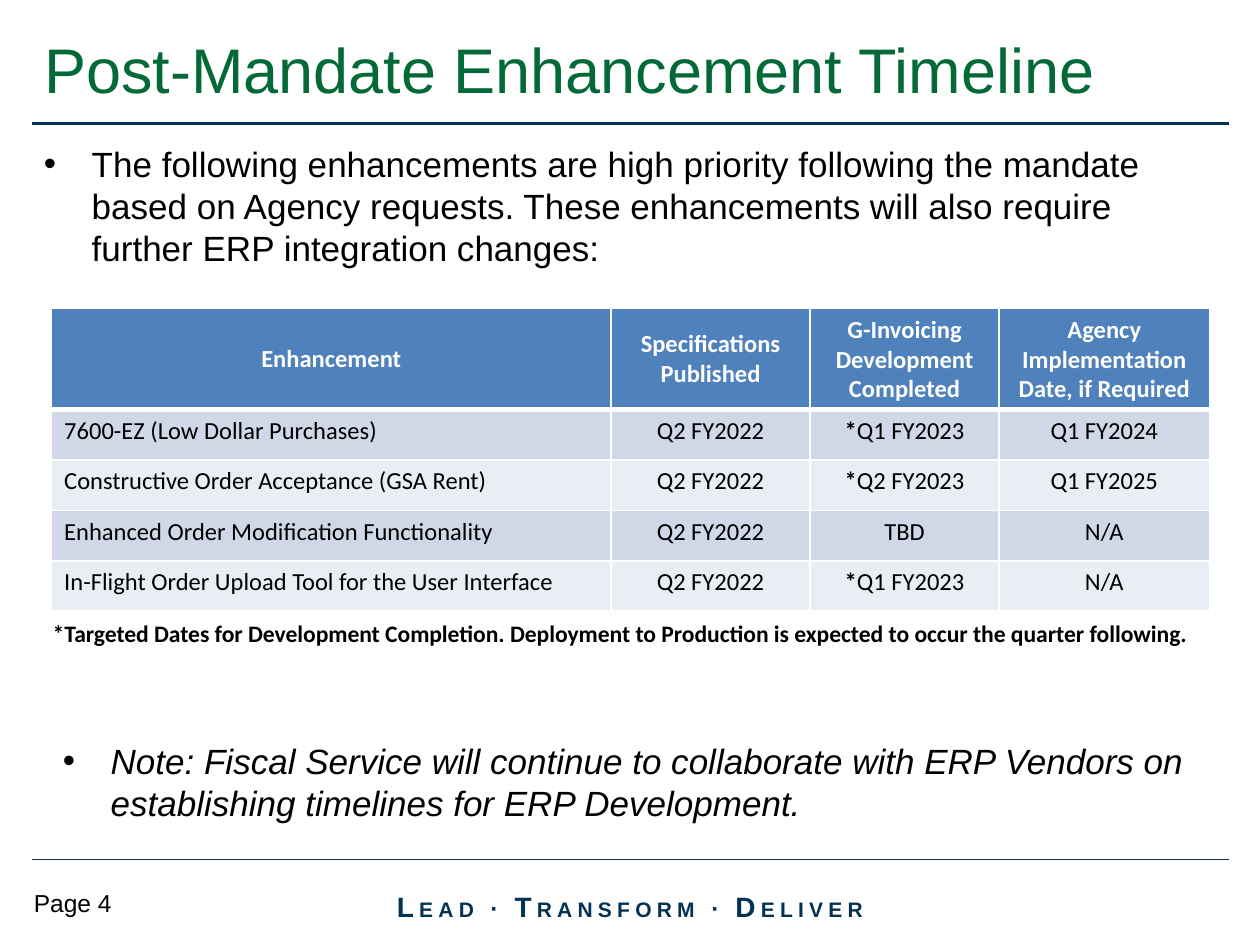
from dataclasses import dataclass

from lxml import etree
from pptx import Presentation
from pptx.dml.color import RGBColor
from pptx.enum.shapes import MSO_CONNECTOR
from pptx.enum.text import MSO_ANCHOR, PP_ALIGN
from pptx.oxml.ns import qn
from pptx.util import Inches, Pt

STRAIGHT = MSO_CONNECTOR.STRAIGHT
MIDDLE, TOP = MSO_ANCHOR.MIDDLE, MSO_ANCHOR.TOP
LEFT, CENTER = PP_ALIGN.LEFT, PP_ALIGN.CENTER

COLORS = {
    "navy": "043253",
    "green": "036A37",
    "black": "000000",
    "white": "FFFFFF",
    "header": "4F81BD",
    "band_dark": "D0D8E8",
    "band_light": "E9EDF4",
}


@dataclass
class TextBlock:
    text: str
    left: float
    top: float
    width: float
    height: float
    size: float
    font: str = "Arial"
    bold: bool = False
    italic: bool = False
    bullet: bool = False


@dataclass
class Rule:
    top: float
    weight: float


RULES = [Rule(0.98, 2.25), Rule(6.82, 0.75)]

BLOCKS = [
    TextBlock("The following enhancements are high priority following the mandate "
              "based on Agency requests. These enhancements will also require "
              "further ERP integration changes:",
              0.25, 1.08, 9.5, 1.2, 20, bullet=True),
    TextBlock("Note: Fiscal Service will continue to collaborate with ERP Vendors on "
              "establishing timelines for ERP Development.",
              0.4, 5.82, 9.35, 0.77, 20, italic=True, bullet=True),
    TextBlock("*Targeted Dates for Development Completion. Deployment to Production "
              "is expected to occur the quarter following.",
              0.32, 4.86, 9.5, 0.33, 13.5, font="Calibri", bold=True),
    TextBlock("Page 4", 0.17, 7, 1.25, 0.33, 14),
]

COLUMN_WIDTHS = [4.44, 1.58, 1.5, 1.67]
HEADER_HEIGHT, ROW_HEIGHT = 0.75, 0.4
ROWS = [
    ["Enhancement", "Specifications Published", "G-Invoicing Development Completed",
     "Agency Implementation Date, if Required"],
    ["7600-EZ (Low Dollar Purchases)", "Q2 FY2022", "*Q1 FY2023", "Q1 FY2024"],
    ["Constructive Order Acceptance (GSA Rent)", "Q2 FY2022", "*Q2 FY2023", "Q1 FY2025"],
    ["Enhanced Order Modification Functionality", "Q2 FY2022", "TBD", "N/A"],
    ["In-Flight Order Upload Tool for the User Interface", "Q2 FY2022", "*Q1 FY2023", "N/A"],
]

MOTTO = ["Lead", "Transform", "Deliver"]


def rgb(name: str) -> RGBColor:
    return RGBColor.from_string(COLORS[name])


def style_font(font, name: str, size: float, color: str,
               bold: bool = False, italic: bool = False) -> None:
    font.name, font.size = name, Pt(size)
    font.bold, font.italic = bold, italic
    font.color.rgb = rgb(color)


def add_bullet(para, indent: float) -> None:
    properties = para._p.get_or_add_pPr()
    properties.set("marL", str(Inches(indent)))
    properties.set("indent", str(-Inches(indent)))
    etree.SubElement(properties, qn("a:buFont"), typeface="Arial")
    etree.SubElement(properties, qn("a:buChar"), char="•")


def add_block(slide, block: TextBlock) -> None:
    box = slide.shapes.add_textbox(Inches(block.left), Inches(block.top),
                                   Inches(block.width), Inches(block.height))
    box.text_frame.word_wrap = True
    para = box.text_frame.paragraphs[0]
    para.text = block.text
    if block.bullet:
        add_bullet(para, 0.38)
    style_font(para.font, block.font, block.size, "black", block.bold, block.italic)


def add_rule(slide, rule: Rule) -> None:
    line = slide.shapes.add_connector(STRAIGHT, Inches(0.25), Inches(rule.top),
                                      Inches(9.75), Inches(rule.top))
    line.line.color.rgb = rgb("navy")
    line.line.width = Pt(rule.weight)
    etree.SubElement(line._element.spPr, qn("a:effectLst"))


def add_title(slide) -> None:
    title = slide.shapes.title
    title.left, title.top = Inches(0.25), Inches(0.17)
    title.width, title.height = Inches(9.5), Inches(0.75)
    title.text_frame.vertical_anchor = MIDDLE
    para = title.text_frame.paragraphs[0]
    para.text = "Post-Mandate Enhancement Timeline"
    para.alignment = LEFT
    style_font(para.font, "Arial", 36, "green")


def add_motto(slide) -> None:
    """Set the footer motto in spaced capitals with larger initials."""
    box = slide.shapes.add_textbox(Inches(2.83), Inches(6.99), Inches(4.34), Inches(0.4))
    box.text_frame.word_wrap = True
    box.text_frame.vertical_anchor = MIDDLE
    para = box.text_frame.paragraphs[0]
    para.alignment = CENTER
    pieces = []
    for word in MOTTO:
        if pieces:
            pieces += [(" ", 12), ("∙ ", 14)]
        pieces += [(word[0], 16), (word[1:].upper(), 12)]
    for text, size in pieces:
        span = para.add_run()
        span.text = text
        style_font(span.font, "Arial", size, "navy", bold=True)
        span.font._element.set("spc", "300")


def add_borders(cell, top: float, bottom: float) -> None:
    properties = cell._tc.get_or_add_tcPr()
    for side, weight in (("L", 1), ("R", 1), ("T", top), ("B", bottom)):
        line = etree.SubElement(properties, qn(f"a:ln{side}"), w=str(Pt(weight)))
        fill = etree.SubElement(line, qn("a:solidFill"))
        etree.SubElement(fill, qn("a:srgbClr"), val=COLORS["white"])


def fill_cell(cell, text: str, row: int, column: int) -> None:
    header = row == 0
    add_borders(cell, top=3 if row == 1 else 1, bottom=3 if header else 1)
    cell.fill.solid()
    band = "band_dark" if row % 2 else "band_light"
    cell.fill.fore_color.rgb = rgb("header" if header else band)
    cell.vertical_anchor = MIDDLE if header else TOP
    para = cell.text_frame.paragraphs[0]
    para.alignment = CENTER if header or column else LEFT
    style_font(para.font, "Calibri", 14, "white" if header else "black", bold=header)
    if text.startswith("*"):
        star = para.add_run()
        star.text, text = "*", text[1:]
        star.font.bold = True
    para.add_run().text = text


def add_timeline(slide) -> None:
    heights = [HEADER_HEIGHT] + [ROW_HEIGHT] * (len(ROWS) - 1)
    table = slide.shapes.add_table(len(ROWS), len(COLUMN_WIDTHS), Inches(0.41), Inches(2.45),
                                   Inches(sum(COLUMN_WIDTHS)), Inches(sum(heights))).table
    for column, width in zip(table.columns, COLUMN_WIDTHS):
        column.width = Inches(width)
    for row, height in zip(table.rows, heights):
        row.height = Inches(height)
    for row, texts in enumerate(ROWS):
        for column, text in enumerate(texts):
            fill_cell(table.cell(row, column), text, row, column)


def main() -> None:
    deck = Presentation()
    deck.slide_width, deck.slide_height = Inches(10), Inches(7.5)
    page = deck.slides.add_slide(deck.slide_layouts[5])
    add_title(page)
    for rule in RULES:
        add_rule(page, rule)
    for block in BLOCKS:
        add_block(page, block)
    add_timeline(page)
    add_motto(page)
    deck.save("out.pptx")


if __name__ == "__main__":
    main()
